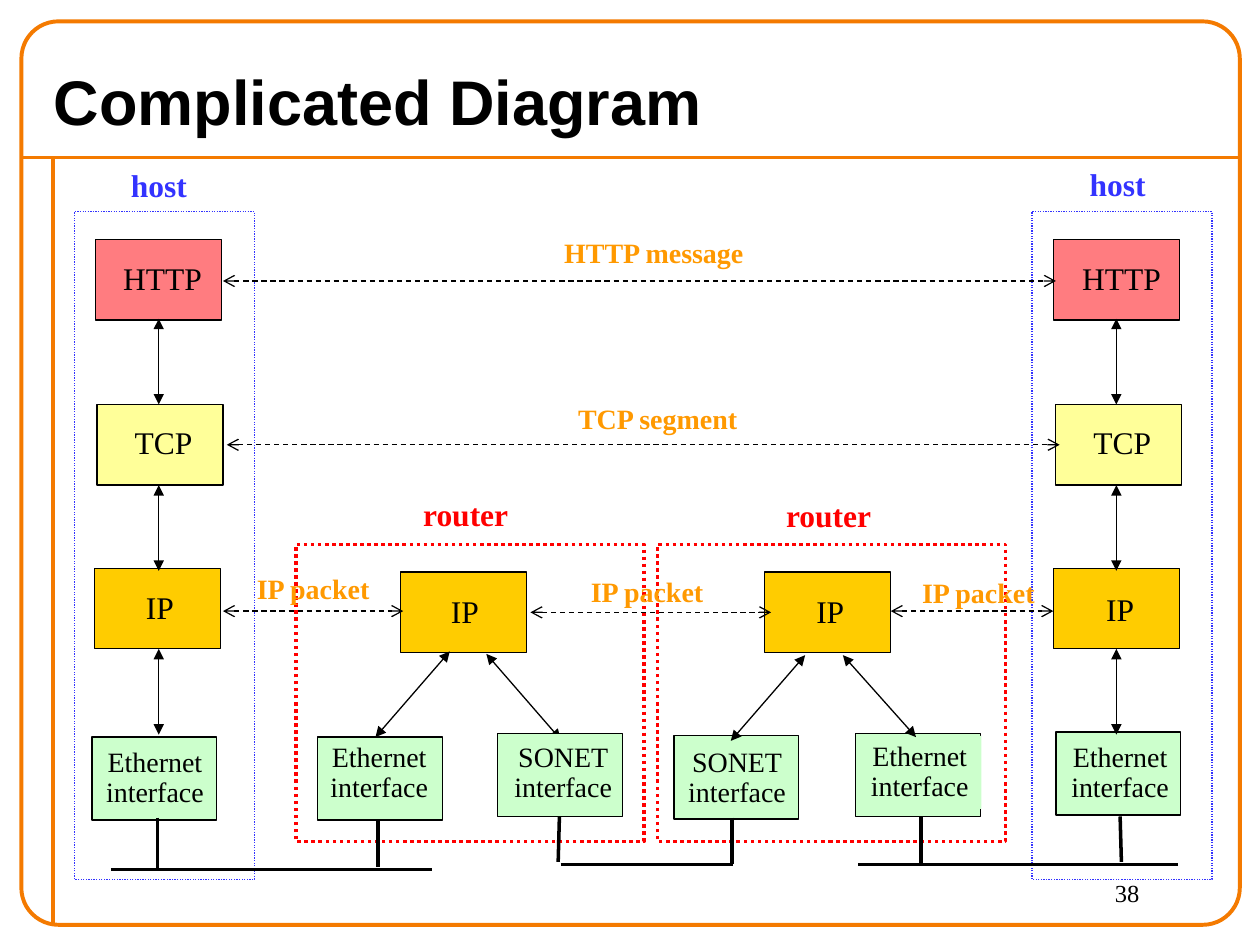
from lxml import etree
from pptx import Presentation
from pptx.dml.color import RGBColor
from pptx.enum import dml, shapes, text
from pptx.oxml import ns
from pptx.util import Inches, Pt

THEME = {
    "black": "000000", "orange": "F47A00", "amber": "FF9900", "blue": "3333FF", "red": "FF0000",
    "http": "FF7C80", "tcp": "FFFF99", "ip": "FFCC00", "interface": "CCFFCC",
    "serif": "Times New Roman", "sans": "Arial",
    "title": 36, "body": 18, "small": 16, "number": 14,
    "thin": 0.75, "thick": 2, "rule": 2.25,
}
DOTTED = dml.MSO_LINE.ROUND_DOT
DASHED = dml.MSO_LINE.DASH


def write(words, left, top, width, height, size="body", color="black", font="serif",
          bold=False, align=None, spacing=None, fill=None, anchor=text.MSO_ANCHOR.TOP):
    label = slide.shapes.add_textbox(Inches(left), Inches(top), Inches(width), Inches(height))
    if fill:
        label.fill.solid()
        label.fill.fore_color.rgb = RGBColor.from_string(THEME[fill])
    frame = label.text_frame
    frame.word_wrap = False
    frame.vertical_anchor = anchor
    frame.text = words
    for paragraph in frame.paragraphs:
        paragraph.alignment = align
        paragraph.line_spacing = spacing
        paragraph.font.name = THEME[font]
        paragraph.font.size = Pt(THEME[size])
        paragraph.font.bold = bold
        paragraph.font.color.rgb = RGBColor.from_string(THEME[color])


def link(x1, y1, x2, y2, arrow=None, weight="thin", color="black", dash=None):
    connector = slide.shapes.add_connector(
        shapes.MSO_CONNECTOR.STRAIGHT, Inches(x1), Inches(y1), Inches(x2), Inches(y2))
    connector.line.color.rgb = RGBColor.from_string(THEME[color])
    connector.line.width = Pt(THEME[weight])
    if dash:
        connector.line.dash_style = dash
    if arrow:
        outline = connector.line._get_or_add_ln()
        for end in ("a:headEnd", "a:tailEnd"):
            etree.SubElement(outline, ns.qn(end), type=arrow)
    etree.SubElement(connector._element.spPr, ns.qn("a:effectLst"))


deck = Presentation()
deck.slide_width, deck.slide_height = Inches(10), Inches(7.5)
slide = deck.slides.add_slide(deck.slide_layouts[6])

link(0.17, 1.25, 9.83, 1.25, weight="rule", color="orange")
link(0.42, 1.25, 0.42, 7.33, weight="rule", color="orange")
link(3.86, 5.19, 4.45, 5.87, arrow="triangle")

rounded, square = shapes.MSO_SHAPE.ROUNDED_RECTANGLE, shapes.MSO_SHAPE.RECTANGLE
panels = [(rounded, 0.17, 0.17, 9.67, 7.17, None, "orange", "rule", None)]
for left in (0.59, 8.19):
    panels.append((square, left, 1.68, 1.43, 5.3, None, "blue", "thin", DOTTED))
for left in (2.35, 5.22):
    panels.append((square, left, 4.32, 2.76, 2.36, None, "red", "thick", DOTTED))
for layer, left, top in (
    ("http", 0.76, 1.9), ("tcp", 0.77, 3.21), ("ip", 0.75, 4.51),
    ("http", 8.36, 1.9), ("tcp", 8.38, 3.21), ("ip", 8.36, 4.51),
    ("ip", 3.18, 4.54), ("ip", 6.07, 4.54),
):
    panels.append((square, left, top, 1, 0.64, layer, "black", "thin", None))

interfaces = [
    ("Ethernet", 0.73, 5.85, 0.74, 5.89, None),
    ("Ethernet", 2.52, 5.85, 2.52, 5.85, None),
    ("SONET", 3.95, 5.82, 3.98, 5.85, None),
    ("SONET", 5.35, 5.84, 5.36, 5.89, None),
    ("Ethernet", 6.79, 5.82, 6.81, 5.84, "interface"),
    ("Ethernet", 8.38, 5.81, 8.4, 5.85, None),
]
for network, left, top, *caption in interfaces:
    panels.append((square, left, top, 0.99, 0.66, "interface", "black", "thin", None))

for outline, left, top, width, height, fill, color, weight, dash in panels:
    panel = slide.shapes.add_shape(
        outline, Inches(left), Inches(top), Inches(width), Inches(height))
    panel.shadow.inherit = False
    if outline == rounded:
        panel.adjustments[0] = 0.041
    if fill:
        panel.fill.solid()
        panel.fill.fore_color.rgb = RGBColor.from_string(THEME[fill])
    else:
        panel.fill.background()
    panel.line.color.rgb = RGBColor.from_string(THEME[color])
    panel.line.width = Pt(THEME[weight])
    if dash:
        panel.line.dash_style = dash

write("Complicated Diagram", 0.33, 0.42, 9.67, 0.75, size="title", font="sans", bold=True,
      anchor=text.MSO_ANCHOR.MIDDLE)
write("38", 8.75, 6.92, 1, 0.42, size="number")

for network, left, top, caption_left, caption_top, fill in interfaces:
    write(f"{network}\ninterface", caption_left, caption_top, 0.98, 0.58, size="small",
          align=text.PP_ALIGN.CENTER, spacing=0.9, fill=fill)

for shift in (0, 7.61):
    write("HTTP", 0.88 + shift, 2.01, 0.83, 0.4)
    write("TCP", 0.97 + shift, 3.31, 0.66, 0.4)
for left, top in ((1.06, 4.62), (3.48, 4.65), (6.38, 4.65), (8.68, 4.63)):
    write("IP", left, top, 0.42, 0.4, fill="ip")

for stack in (1.26, 8.86):
    for top in (2.53, 3.85, 5.15):
        link(stack, top, stack, top + 0.68, arrow="triangle")
for route in ((3.57, 5.17, 2.98, 5.85), (6.39, 5.2, 5.8, 5.88), (6.69, 5.2, 7.27, 5.85)):
    link(*route, arrow="triangle")

for cable in (
    (1.25, 6.49, 1.25, 6.9), (3, 6.52, 3, 6.88), (0.88, 6.9, 3.43, 6.9),
    (4.44, 6.48, 4.43, 6.84), (5.81, 6.49, 5.81, 6.86), (4.45, 6.86, 5.82, 6.86),
    (7.31, 6.48, 7.31, 6.87), (8.89, 6.48, 8.9, 6.84), (9.35, 6.86, 6.81, 6.86),
):
    link(*cable, weight="thick")

for left, right, height in (
    (1.77, 8.38, 2.23), (1.8, 8.41, 3.53),
    (1.77, 3.2, 4.85), (4.21, 6.12, 4.86), (7.07, 8.36, 4.85),
):
    link(left, height, right, height, arrow="arrow", dash=DASHED)

for words, left, top, width, height, size, color in (
    ("host", 0.94, 1.27, 0.65, 0.4, "body", "blue"),
    ("host", 8.55, 1.26, 0.65, 0.4, "body", "blue"),
    ("router", 3.26, 3.88, 0.88, 0.4, "body", "red"),
    ("router", 6.14, 3.89, 0.88, 0.4, "body", "red"),
    ("HTTP message", 4.38, 1.82, 1.64, 0.37, "small", "amber"),
    ("TCP segment", 4.49, 3.14, 1.48, 0.37, "small", "amber"),
    ("IP packet", 1.94, 4.49, 1.11, 0.37, "small", "amber"),
    ("IP packet", 4.59, 4.51, 1.11, 0.37, "small", "amber"),
    ("IP packet", 7.22, 4.52, 1.11, 0.37, "small", "amber"),
):
    write(words, left, top, width, height, size=size, color=color, bold=True)

deck.save("out.pptx")
